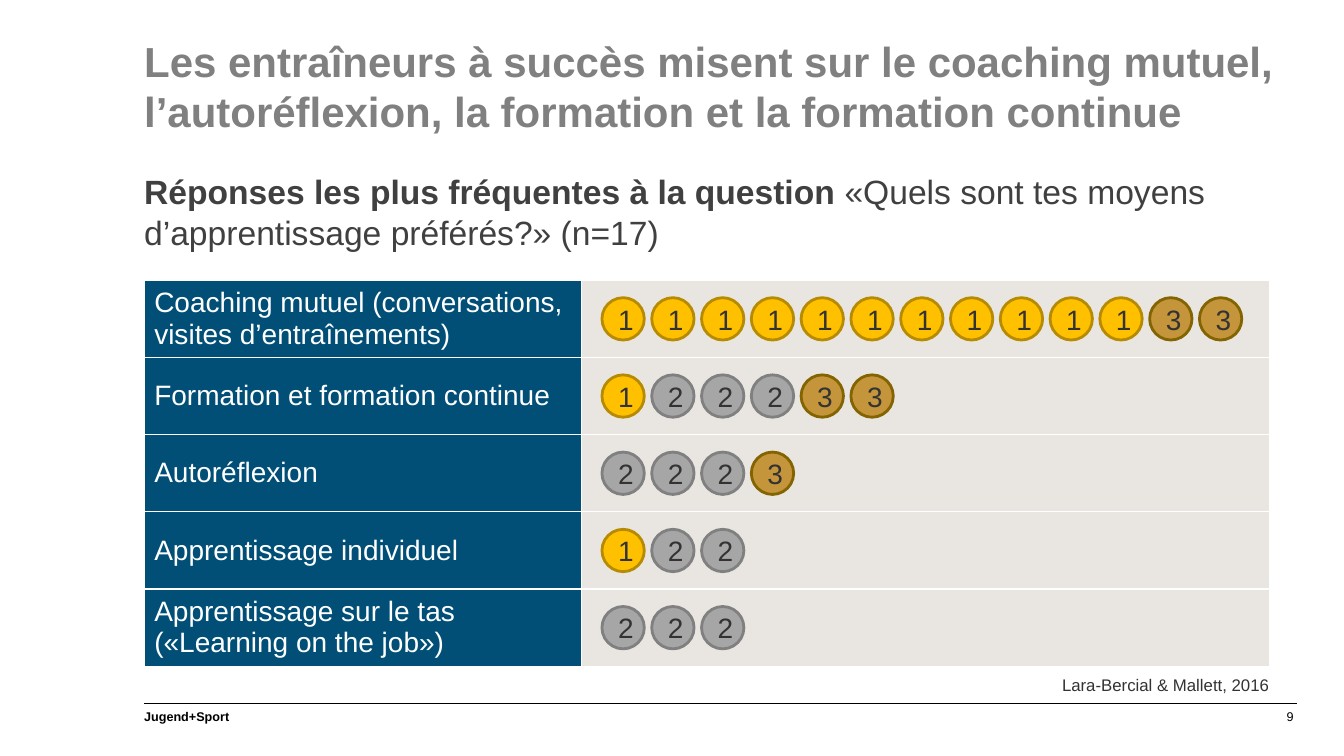
import collections
import lxml.etree
import pptx
import pptx.dml.color
import pptx.enum.shapes
import pptx.enum.text
import pptx.oxml.ns
import pptx.util

Box = collections.namedtuple("Box", "left top width height")
ALIGN = pptx.enum.text.PP_ALIGN
ANCHOR = pptx.enum.text.MSO_ANCHOR

COLORS = {
    "title": "808080", "lead": "404040", "text": "333333", "footer": "000000",
    "label": "014F77", "lane": "E9E6E2", "white": "FFFFFF",
}
COINS = {
    "1": {"fill": "FFC000", "line": "B78B01"},
    "2": {"fill": "A6A6A6", "line": "808080"},
    "3": {"fill": "C5953C", "line": "836401"},
}
ANSWERS = [
    ("Coaching mutuel (conversations, visites d’entraînements)", "1111111111133"),
    ("Formation et formation continue", "122233"),
    ("Autoréflexion", "2223"),
    ("Apprentissage individuel", "122"),
    ("Apprentissage sur le tas («Learning on the job»)", "222"),
]
TITLE_LINES = [
    "Les entraîneurs à succès misent sur le coaching mutuel,",
    "l’autoréflexion, la formation et la formation continue",
]
LEAD_BOLD = "Réponses les plus fréquentes à la question "
LEAD_LINES = ["«Quels sont tes moyens", "d’apprentissage préférés?» (n=17)"]
LABEL_WIDTH = 4.34
LANE_WIDTH = 6.82
COIN_COLUMNS = 13
COIN_SIZE = 0.42
COIN_MARGIN = 0.2


def rgb(color):
    return pptx.dml.color.RGBColor.from_string(color)


def emu(box):
    return [pptx.util.Inches(length) for length in box]


def add_lines(paragraph, lines):
    for index, line in enumerate(lines):
        if index:
            paragraph.add_line_break()
        paragraph.add_run().text = line


def format_runs(paragraph, size, color, bold=False):
    for run in paragraph.runs:
        run.font.name = "Arial"
        run.font.size = pptx.util.Pt(size)
        run.font.bold = bold
        run.font.color.rgb = rgb(color)


def set_frame(frame, left=0.1, right=0.1, vertical=0.05, anchor=ANCHOR.TOP):
    frame.word_wrap = True
    frame.auto_size = pptx.enum.text.MSO_AUTO_SIZE.NONE
    frame.margin_left = pptx.util.Inches(left)
    frame.margin_right = pptx.util.Inches(right)
    frame.margin_top = frame.margin_bottom = pptx.util.Inches(vertical)
    frame.vertical_anchor = anchor


def add_note(slide, box, text, size, color, bold=False, align=ALIGN.LEFT, **frame_options):
    frame = slide.shapes.add_textbox(*emu(box)).text_frame
    set_frame(frame, **frame_options)
    paragraph = frame.paragraphs[0]
    paragraph.text = text
    paragraph.alignment = align
    format_runs(paragraph, size, color, bold)


def add_title(slide, box):
    title = slide.shapes.title
    title.left, title.top, title.width, title.height = emu(box)
    set_frame(title.text_frame, left=0, right=0, anchor=ANCHOR.MIDDLE)
    paragraph = title.text_frame.paragraphs[0]
    paragraph.alignment = ALIGN.LEFT
    add_lines(paragraph, TITLE_LINES)
    format_runs(paragraph, 30, COLORS["title"], bold=True)


def add_lead(slide, box):
    frame = slide.shapes.add_textbox(*emu(box)).text_frame
    set_frame(frame, left=0)
    paragraph = frame.paragraphs[0]
    add_lines(paragraph, [LEAD_BOLD])
    add_lines(paragraph, LEAD_LINES)
    format_runs(paragraph, 24, COLORS["lead"])
    paragraph.runs[0].font.bold = True


def style_cell(cell, fill):
    properties = cell._tc.get_or_add_tcPr()
    for side in ("lnL", "lnR", "lnT", "lnB"):
        border = lxml.etree.SubElement(
            properties, pptx.oxml.ns.qn(f"a:{side}"), w=str(pptx.util.Pt(1)))
        solid = lxml.etree.SubElement(border, pptx.oxml.ns.qn("a:solidFill"))
        lxml.etree.SubElement(solid, pptx.oxml.ns.qn("a:srgbClr"), val=COLORS["white"])
    cell.fill.solid()
    cell.fill.fore_color.rgb = rgb(fill)
    cell.vertical_anchor = ANCHOR.MIDDLE


def add_coin(group, box, rank):
    coin = group.shapes.add_shape(pptx.enum.shapes.MSO_SHAPE.OVAL, *emu(box))
    coin.shadow.inherit = False
    coin.fill.solid()
    coin.fill.fore_color.rgb = rgb(COINS[rank]["fill"])
    coin.line.color.rgb = rgb(COINS[rank]["line"])
    coin.line.width = pptx.util.Pt(2)
    set_frame(coin.text_frame, anchor=ANCHOR.MIDDLE)
    paragraph = coin.text_frame.paragraphs[0]
    paragraph.text = rank
    paragraph.alignment = ALIGN.CENTER
    format_runs(paragraph, 20, COLORS["text"])


def add_coin_row(slide, lane, ranks):
    group = slide.shapes.add_group_shape()
    pitch = (lane.width - 2 * COIN_MARGIN) / COIN_COLUMNS
    top = lane.top + (lane.height - COIN_SIZE) / 2
    for column, rank in enumerate(ranks):
        left = lane.left + COIN_MARGIN + column * pitch
        add_coin(group, Box(left, top, COIN_SIZE, COIN_SIZE), rank)


def add_answers(slide, box):
    table = slide.shapes.add_table(len(ANSWERS), 2, *emu(box)).table
    table.first_row = False
    table.horz_banding = False
    table.columns[0].width = pptx.util.Inches(LABEL_WIDTH)
    table.columns[1].width = pptx.util.Inches(LANE_WIDTH)
    row_height = box.height / len(ANSWERS)
    for row, (label, ranks) in enumerate(ANSWERS):
        label_cell, lane_cell = table.cell(row, 0), table.cell(row, 1)
        style_cell(label_cell, COLORS["label"])
        style_cell(lane_cell, COLORS["lane"])
        label_cell.text_frame.text = label
        format_runs(label_cell.text_frame.paragraphs[0], 20, COLORS["white"])
        lane = Box(box.left + LABEL_WIDTH, box.top + row * row_height, LANE_WIDTH, row_height)
        add_coin_row(slide, lane, ranks)


def add_footer(slide, box):
    right = box.left + box.width
    rule = slide.shapes.add_connector(
        pptx.enum.shapes.MSO_CONNECTOR.STRAIGHT,
        *emu((box.left, box.top, right, box.top)))
    rule.line.color.rgb = rgb(COLORS["footer"])
    rule.line.width = pptx.util.Pt(0.75)
    lxml.etree.SubElement(rule._element.spPr, pptx.oxml.ns.qn("a:effectLst"))
    half = box.width / 2
    add_note(slide, Box(box.left, box.top, half, box.height), "Jugend+Sport",
             9, COLORS["footer"], bold=True, left=0)
    add_note(slide, Box(right - half, box.top, half, box.height), "9",
             9, COLORS["footer"], align=ALIGN.RIGHT, right=0.03)


def main():
    presentation = pptx.Presentation()
    presentation.slide_width = pptx.util.Inches(13.33)
    presentation.slide_height = pptx.util.Inches(7.5)
    slide = presentation.slides.add_slide(presentation.slide_layouts[5])
    left = 1.43
    table_width = LABEL_WIDTH + LANE_WIDTH
    add_title(slide, Box(left, 0.28, 11.83, 1.14))
    add_lead(slide, Box(left, 1.65, 11.08, 0.91))
    add_answers(slide, Box(left, 2.78, table_width, 3.83))
    add_note(slide, Box(left + table_width - 2.5, 6.64, 2.5, 0.3),
             "Lara-Bercial & Mallett, 2016", 12, COLORS["text"],
             align=ALIGN.RIGHT, right=0)
    add_footer(slide, Box(left, 6.98, 11.43, 0.25))
    presentation.save("out.pptx")


if __name__ == "__main__":
    main()
